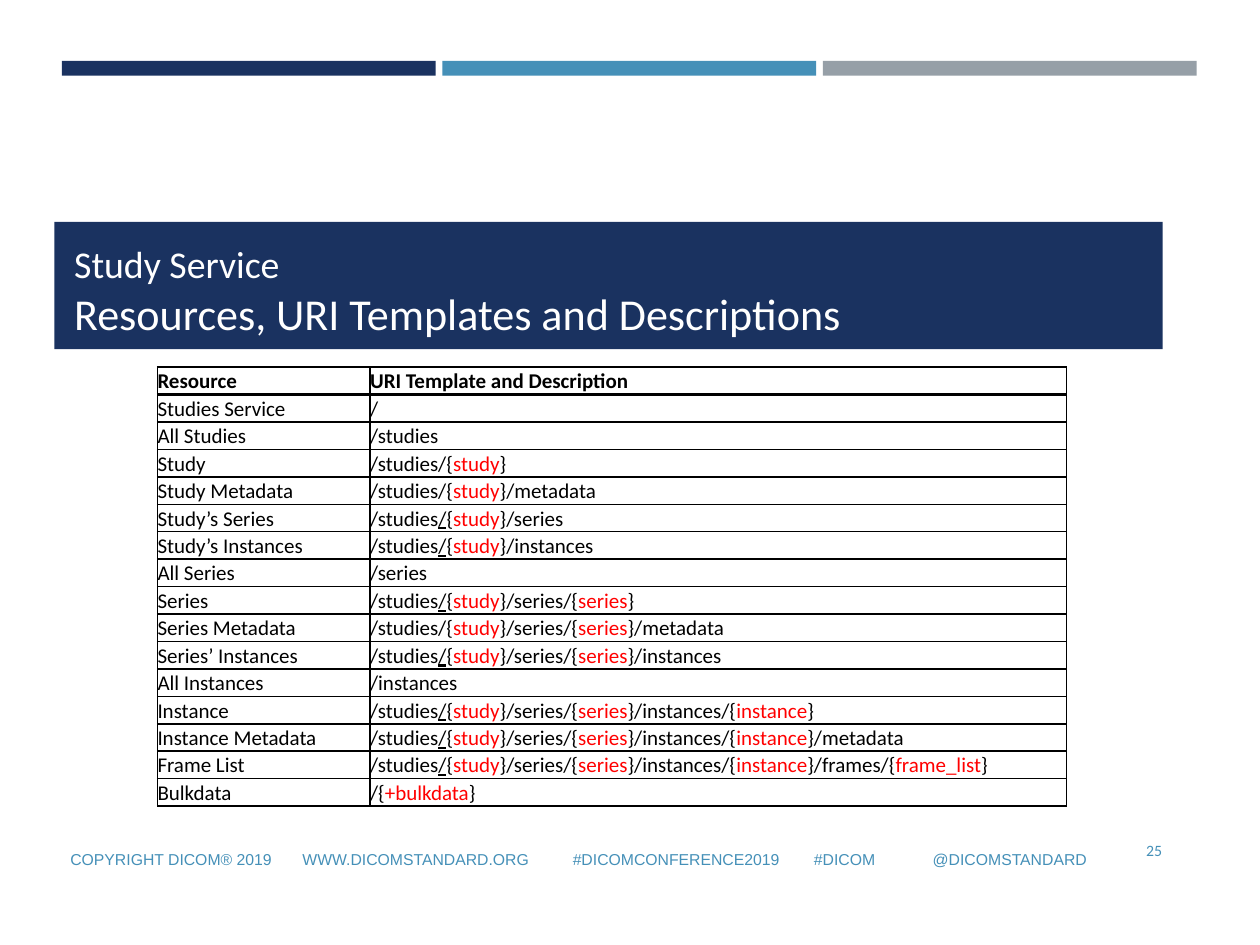
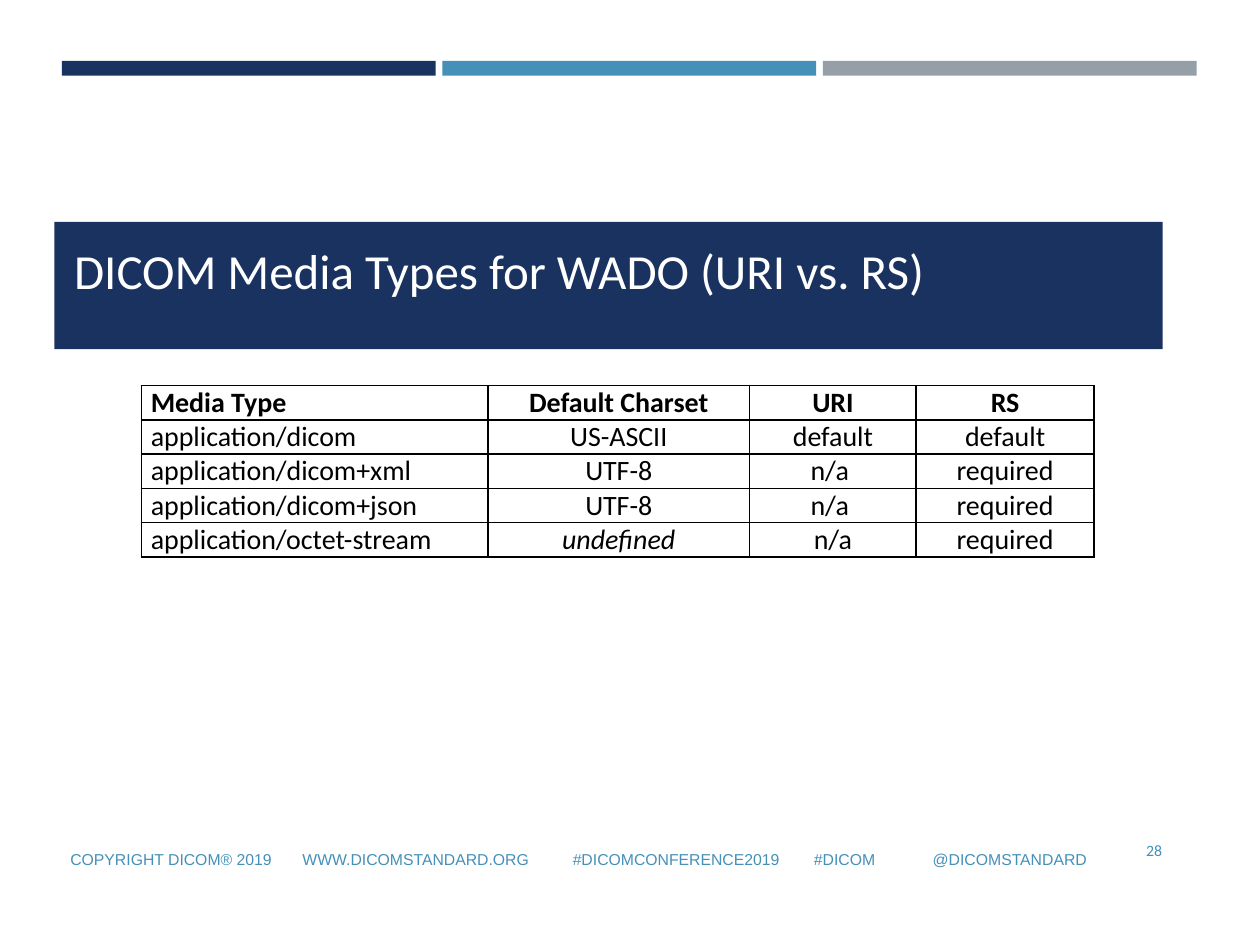
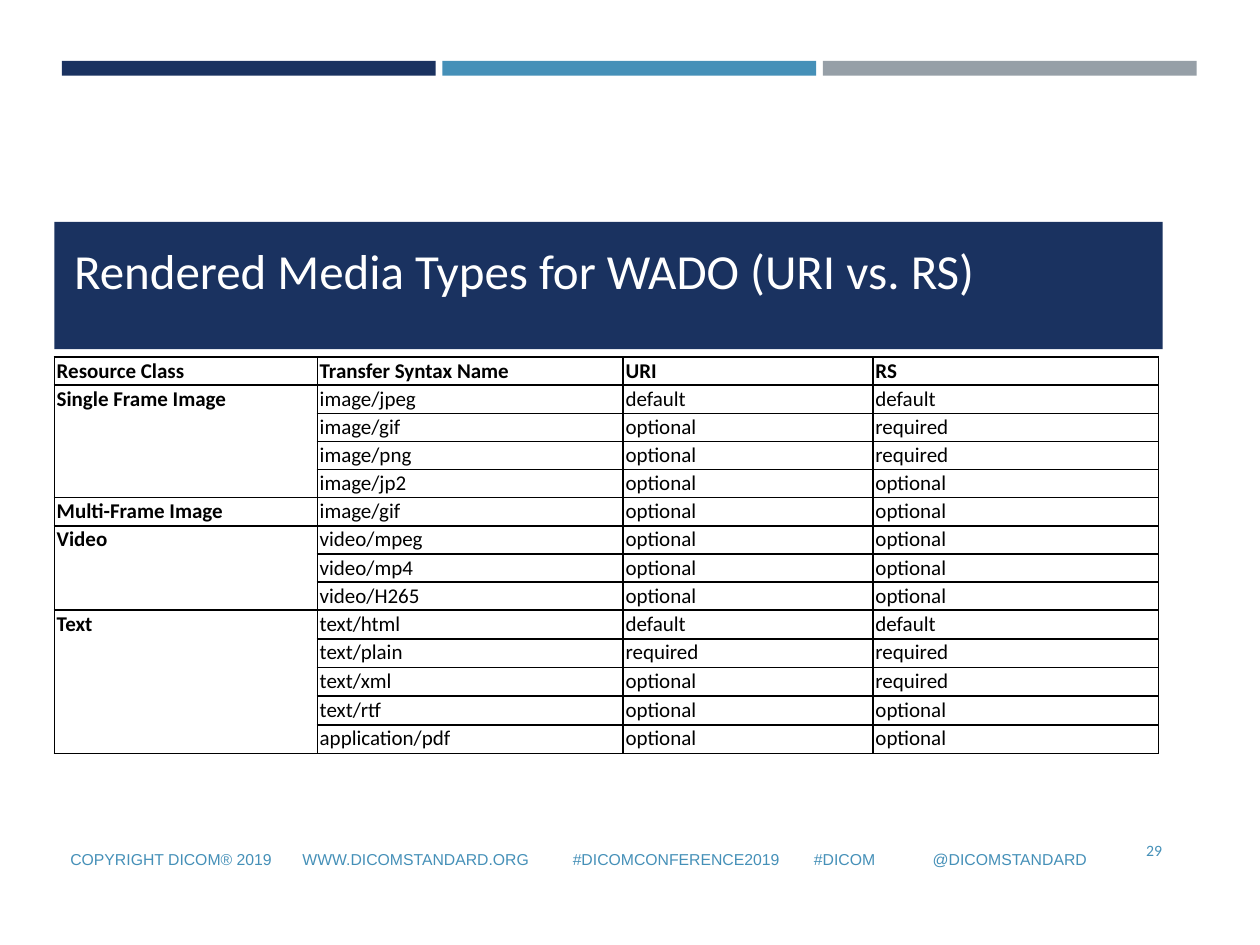
import pptx
import pptx.dml.color
import pptx.enum.shapes
import pptx.enum.text
import pptx.oxml
import pptx.oxml.ns
import pptx.util

Pt = pptx.util.Pt
ALIGN = pptx.enum.text.PP_ALIGN
ANCHOR = pptx.enum.text.MSO_ANCHOR

NAVY, BLUE, GREY = "1A3260", "4590B8", "969FA7"
BLACK, WHITE, RED = "000000", "FFFFFF", "FF0000"

FOOTER_PARTS = ["COPYRIGHT DICOM® 2019", "WWW.DICOMSTANDARD.ORG",
                "#DICOMCONFERENCE2019", "#DICOM", "@DICOMSTANDARD"]
FOOTER_TABS = [132.6, 287.1, 424.9, 492.8]

# {variable} is set in red, [/] is an underlined slash
URI_TEMPLATES = [
    ("Resource", "URI Template and Description"),
    ("Studies Service", "/"),
    ("All Studies", "/studies"),
    ("Study", "/studies/{study}"),
    ("Study Metadata", "/studies/{study}/metadata"),
    ("Study’s Series", "/studies[/]{study}/series"),
    ("Study’s Instances", "/studies[/]{study}/instances"),
    ("All Series", "/series"),
    ("Series", "/studies[/]{study}/series/{series}"),
    ("Series Metadata", "/studies/{study}/series/{series}/metadata"),
    ("Series’ Instances", "/studies[/]{study}/series/{series}/instances"),
    ("All Instances", "/instances"),
    ("Instance", "/studies[/]{study}/series/{series}/instances/{instance}"),
    ("Instance Metadata", "/studies[/]{study}/series/{series}/instances/{instance}/metadata"),
    ("Frame List",
     "/studies[/]{study}/series/{series}/instances/{instance}/frames/{frame_list}"),
    ("Bulkdata", "/{+bulkdata}"),
]

DICOM_TYPES = [
    ("Media Type", "Default Charset", "URI", "RS"),
    ("application/dicom", "US-ASCII", "default", "default"),
    ("application/dicom+xml", "UTF-8", "n/a ", "required"),
    ("application/dicom+json", "UTF-8", "n/a ", "required"),
    ("application/octet-stream", "undefined", "n/a", "required"),
]

# an empty first cell continues the resource class above it
RENDERED_TYPES = [
    ("Resource Class", "Transfer Syntax Name", "URI", "RS"),
    ("Single Frame Image", "image/jpeg", "default", "default"),
    ("", "image/gif", "optional", "required"),
    ("", "image/png", "optional", "required"),
    ("", "image/jp2", "optional", "optional"),
    ("Multi-Frame Image", "image/gif", "optional", "optional"),
    ("Video", "video/mpeg", "optional", "optional"),
    ("", "video/mp4", "optional", "optional"),
    ("", "video/H265", "optional", "optional"),
    ("Text", "text/html", "default", "default"),
    ("", "text/plain", "required", "required"),
    ("", "text/xml", "optional", "required"),
    ("", "text/rtf", "optional", "optional"),
    ("", "application/pdf", "optional", "optional"),
]


def color(value):
    return pptx.dml.color.RGBColor.from_string(value)


def style_run(run, size, value, font="Calibri", bold=False):
    run.font.size = Pt(size)
    run.font.name = font
    run.font.bold = bold
    run.font.color.rgb = color(value)


def add_band(slide, box, fill):
    band = slide.shapes.add_shape(pptx.enum.shapes.MSO_SHAPE.RECTANGLE, *map(Pt, box))
    band.shadow.inherit = False
    band.fill.solid()
    band.fill.fore_color.rgb = color(fill)
    band.line.fill.background()


def add_text(slide, box, text, sizes, value, font="Calibri", anchor=ANCHOR.TOP):
    """Add a one-paragraph text box with one size for each line; return the paragraph."""
    frame = slide.shapes.add_textbox(*map(Pt, box)).text_frame
    frame.word_wrap = True
    frame.vertical_anchor = anchor
    frame.text = text
    paragraph = frame.paragraphs[0]
    for run, size in zip(paragraph.runs, sizes):
        style_run(run, size, value, font)
    return paragraph


def add_top_bands(slide, left, top, width, height, gap):
    for index, fill in enumerate((NAVY, BLUE, GREY)):
        add_band(slide, (left + index * (width + gap), top, width, height), fill)


def add_title(slide, box, title, sizes):
    left, top, width, height = box
    add_band(slide, box, NAVY)
    add_text(slide, (left + 4.3, top + 7.2, width - 4.3, height - 7.2), title, sizes, WHITE)


def add_footer(slide, box, number):
    left, top, width, height = box
    credits = add_text(slide, (left, top + 8, width - 30, height - 8),
                       "\t".join(FOOTER_PARTS), [9], BLUE, "Arial", ANCHOR.MIDDLE)
    tabs = pptx.oxml.ns.nsdecls("a")
    stops = "".join(f'<a:tab pos="{Pt(stop)}" algn="l"/>' for stop in FOOTER_TABS)
    credits._p.get_or_add_pPr().append(
        pptx.oxml.parse_xml(f"<a:tabLst {tabs}>{stops}</a:tabLst>"))
    page = add_text(slide, (left + width - 31, top, 31, 33.8), str(number), [9], BLUE,
                    anchor=ANCHOR.MIDDLE)
    page.alignment = ALIGN.RIGHT


def set_borders(cell, top, bottom):
    """Draw black cell borders, 1 pt at the sides."""
    properties = cell._tc.get_or_add_tcPr()
    for side, width in (("L", 1), ("R", 1), ("T", top), ("B", bottom)):
        properties.append(pptx.oxml.parse_xml(
            f'<a:ln{side} {pptx.oxml.ns.nsdecls("a")} w="{Pt(width)}"><a:solidFill>'
            f'<a:srgbClr val="{BLACK}"/></a:solidFill></a:ln{side}>'))


def add_grid(slide, left, top, columns, heights, rows, size, insets=(0, 0, 0), header_rule=1):
    """Add a ruled table; insets are left, right and vertical. Return the table."""
    table = slide.shapes.add_table(len(rows), len(columns), Pt(left), Pt(top),
                                   Pt(sum(columns)), Pt(sum(heights))).table
    table.first_row = table.horz_banding = False
    for column, width in zip(table.columns, columns):
        column.width = Pt(width)
    for r, (row, height) in enumerate(zip(rows, heights)):
        table.rows[r].height = Pt(height)
        for c, text in enumerate(row):
            cell = table.cell(r, c)
            set_borders(cell, header_rule if r == 1 else 1, header_rule if r == 0 else 1)
            cell.fill.background()
            cell.margin_left, cell.margin_right = Pt(insets[0]), Pt(insets[1])
            cell.margin_top = cell.margin_bottom = Pt(insets[2])
            cell.text_frame.text = text
            for run in cell.text_frame.paragraphs[0].runs:
                style_run(run, size, BLACK, bold=r == 0)
    return table


def write_template(paragraph, template):
    """Split a URI template into runs: red variables and underlined slashes."""
    marked = template.replace("{", "{|").replace("}", "|}").replace("[/]", "|[/]|")
    paragraph.clear()
    previous = ""
    for part in marked.split("|"):
        run = paragraph.add_run()
        run.text = part.strip("[]")
        style_run(run, 12, RED if previous.endswith("{") else BLACK)
        if part == "[/]":
            run.font.underline = True
        previous = part


def add_uri_templates(slide, left, top):
    table = add_grid(slide, left, top, [121.5, 398], [15.68] * len(URI_TEMPLATES),
                     URI_TEMPLATES, 12, header_rule=2)
    for r, row in enumerate(URI_TEMPLATES):
        for c in range(len(row)):
            table.cell(r, c).text_frame.paragraphs[0].line_spacing = 1.07
        if r:
            write_template(table.cell(r, 1).text_frame.paragraphs[0], row[1])


def add_dicom_types(slide, left, top):
    table = add_grid(slide, left, top, [198, 149.6, 95.2, 101.6], [19.6] * len(DICOM_TYPES),
                     DICOM_TYPES, 16, (5.4, 5.4, 0))
    for r, row in enumerate(DICOM_TYPES):
        for c in range(1, len(row)):
            paragraph = table.cell(r, c).text_frame.paragraphs[0]
            paragraph.alignment = ALIGN.CENTER
            paragraph.runs[0].font.italic = row[c] == "undefined"


def add_rendered_types(slide, left, top):
    table = add_grid(slide, left, top, [150.3, 174.8, 142.8, 163.2],
                     [16.1] * 9 + [16.4] * 5, RENDERED_TYPES, 12, (1.4, 0, 0.7))
    starts = [r for r, row in enumerate(RENDERED_TYPES) if row[0]]
    for start, end in zip(starts, starts[1:] + [len(RENDERED_TYPES)]):
        table.cell(start, 0).text_frame.paragraphs[0].runs[0].font.bold = True
        if end - start > 1:
            table.cell(start, 0).merge(table.cell(end - 1, 0))


def add_slide(deck, title, sizes, number):
    slide = deck.slides.add_slide(deck.slide_layouts[6])
    add_top_bands(slide, left=35.4, top=34.8, width=213.6, height=8.5, gap=3.8)
    add_title(slide, (31, 126.8, 633.4, 72.7), title, sizes)
    add_footer(slide, (33.1, 468.7, 638, 36.1), number)
    return slide


def main():
    deck = pptx.Presentation()
    deck.slide_width, deck.slide_height = Pt(720), Pt(540)

    study_service = add_slide(
        deck, "Study Service\vResources, URI Templates and Descriptions", [21.6, 25.2], 25)
    add_uri_templates(study_service, 90, 209.8)

    dicom = add_slide(deck, "DICOM Media Types for WADO (URI vs. RS)", [28], 28)
    add_dicom_types(dicom, 80.8, 220.3)

    rendered = add_slide(deck, "Rendered Media Types for WADO (URI vs. RS)", [28], 29)
    add_rendered_types(rendered, 31, 204)

    deck.save("out.pptx")


if __name__ == "__main__":
    main()
